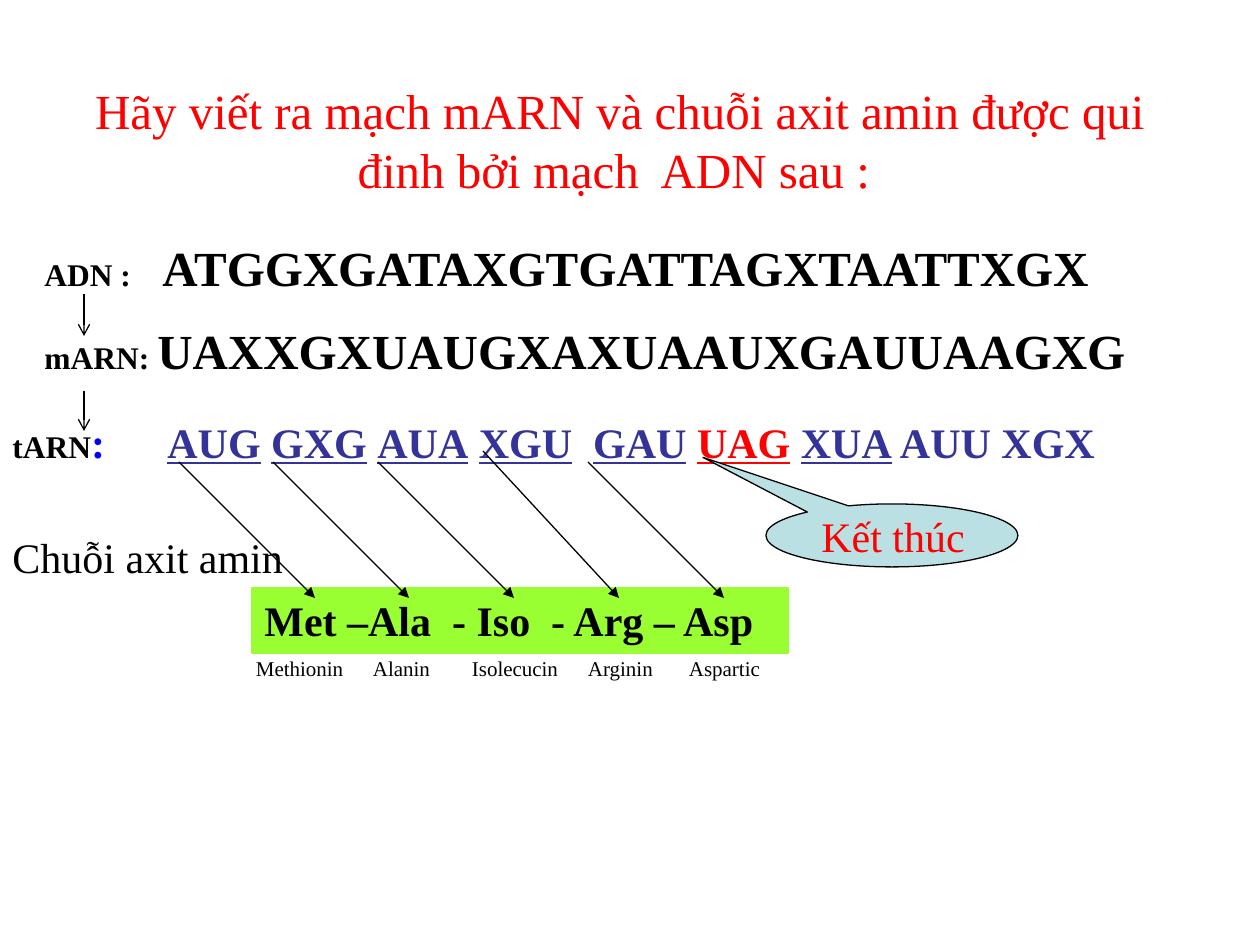
import pptx
import pptx.dml.color
import pptx.enum.shapes
import pptx.enum.text
import pptx.oxml.ns
import pptx.util
from lxml import etree

RGBColor = pptx.dml.color.RGBColor
Shape = pptx.enum.shapes.MSO_SHAPE
Align = pptx.enum.text.PP_ALIGN
Anchor = pptx.enum.text.MSO_ANCHOR
qn = pptx.oxml.ns.qn

BLACK = RGBColor(0x00, 0x00, 0x00)
RED = RGBColor(0xFF, 0x00, 0x00)
BLUE = RGBColor(0x00, 0x00, 0xFF)
INDIGO = RGBColor(0x33, 0x33, 0x99)
GREEN = RGBColor(0x99, 0xFF, 0x33)
PALE_BLUE = RGBColor(0xBB, 0xE0, 0xE3)

PX = 914400 // 126  # EMU in one px


def emu(*lengths):
    return [pptx.util.Emu(length * PX) for length in lengths]


def run(text, size=24, color=BLACK, bold=False, underline=False):
    """Describe one run of text and its format."""
    return dict(text=text, size=size, color=color, bold=bold, underline=underline)


class SlideBuilder:
    def __init__(self, slide, font="Times New Roman", line_width=0.75):
        self.slide = slide
        self.font = font
        self.line_width = pptx.util.Pt(line_width)

    def fill_frame(self, frame, paragraphs, tabs=(), align=Align.LEFT, gap=0):
        """Fill a frame; tabs are px from its left margin, gap is pt between paragraphs."""
        for index, runs in enumerate(paragraphs):
            paragraph = frame.add_paragraph() if index else frame.paragraphs[0]
            paragraph.alignment = align
            if index:
                paragraph.space_before = pptx.util.Pt(gap)
            if tabs:
                tab_list = etree.SubElement(paragraph._p.get_or_add_pPr(), qn("a:tabLst"))
                for tab in tabs:
                    etree.SubElement(tab_list, qn("a:tab"), pos=str(tab * PX), algn="l")
            for part in runs:
                piece = paragraph.add_run()
                piece.text = part["text"]
                piece.font.name = self.font
                piece.font.size = pptx.util.Pt(part["size"])
                piece.font.bold = part["bold"]
                piece.font.underline = part["underline"]
                piece.font.color.rgb = part["color"]

    def text(self, box, *paragraphs, wrap=True, anchor=Anchor.TOP, margins=None, **layout):
        frame = self.slide.shapes.add_textbox(*emu(*box)).text_frame
        frame.word_wrap = wrap
        frame.vertical_anchor = anchor
        if margins:
            frame.margin_left, frame.margin_top = emu(*margins)
        self.fill_frame(frame, paragraphs, **layout)

    def shape(self, kind, box, fill, line, *paragraphs, adjustments=()):
        shape = self.slide.shapes.add_shape(kind, *emu(*box))
        shape.shadow.inherit = False
        shape.fill.solid()
        shape.fill.fore_color.rgb = fill
        shape.line.color.rgb = line
        shape.line.width = self.line_width
        for index, value in enumerate(adjustments):
            shape.adjustments[index] = value
        shape.text_frame.vertical_anchor = Anchor.TOP
        self.fill_frame(shape.text_frame, paragraphs)

    def arrow(self, start, end, head):
        connector = self.slide.shapes.add_connector(
            pptx.enum.shapes.MSO_CONNECTOR.STRAIGHT, *emu(*start, *end))
        connector.line.color.rgb = BLACK
        connector.line.width = self.line_width
        etree.SubElement(connector.line._get_or_add_ln(), qn("a:tailEnd"), type=head)
        etree.SubElement(connector._element.spPr, qn("a:effectLst"))


def codon_runs():
    """The transfer row: underlined codons, the stop codon in red, then the rest."""
    runs = [run("tARN", size=18, bold=True), run(":\t", color=BLUE, bold=True)]
    for codon in ("AUG", "GXG", "AUA", "XGU", "GAU", "UAG", "XUA"):
        color = RED if codon == "UAG" else INDIGO
        gap = {"XGU": "  ", "XUA": " AUU XGX"}.get(codon, " ")
        runs += [run(codon, color=color, bold=True, underline=True),
                 run(gap, color=INDIGO, bold=True)]
    return runs


def main():
    presentation = pptx.Presentation()
    presentation.slide_width, presentation.slide_height = emu(1260, 945)
    builder = SlideBuilder(presentation.slides.add_slide(presentation.slide_layouts[6]))

    question = "Hãy viết ra mạch mARN và chuỗi axit amin được qui đinh bởi mạch  ADN sau : "
    builder.text((53, 58, 1134, 163), [run(question, size=28, color=RED)],
                 align=Align.CENTER, anchor=Anchor.MIDDLE)

    builder.text((0, 410, 1260, 63), codon_runs(), tabs=[155])
    builder.text((0, 525, 399, 63), [run("Chuỗi axit amin")])
    builder.shape(Shape.RECTANGLE, (252, 588, 536, 65), GREEN, GREEN,
                  [run("Met –Ala  - Iso  - Arg – Asp", bold=True)])
    builder.text((32, 231, 1166, 160),
                 [run("ADN :\t", size=18, bold=True),
                  run("ATGGXGATAXGTGATTAGXTAATTXGX", size=28, bold=True)],
                 [run("mARN: ", size=18, bold=True),
                  run("UAXXGXUAUGXAXUAAUXGAUUAAGXG", size=28, bold=True)],
                 tabs=[118], gap=14)

    builder.shape(Shape.OVAL_CALLOUT, (766, 504, 252, 63), PALE_BLUE, BLACK,
                  adjustments=(-0.75, -1.24))
    builder.text((809, 504, 169, 63), [run("Kết thúc", color=RED)], wrap=False)

    for x, y in ((179, 462), (273, 462), (378, 462), (483, 451), (588, 462)):
        builder.arrow((x, y), (x + 136, 598), "triangle")

    names = ("Methionin", "Alanin", "Isolecucin", "Arginin", "Aspartic")
    builder.text((147, 640, 945, 50), [run("\t".join(names), size=12)],
                 tabs=[117, 216, 332, 433], margins=(109, 16))

    for top, bottom in ((294, 336), (391, 431)):
        builder.arrow((84, top), (84, bottom), "arrow")

    presentation.save("out.pptx")


if __name__ == "__main__":
    main()
